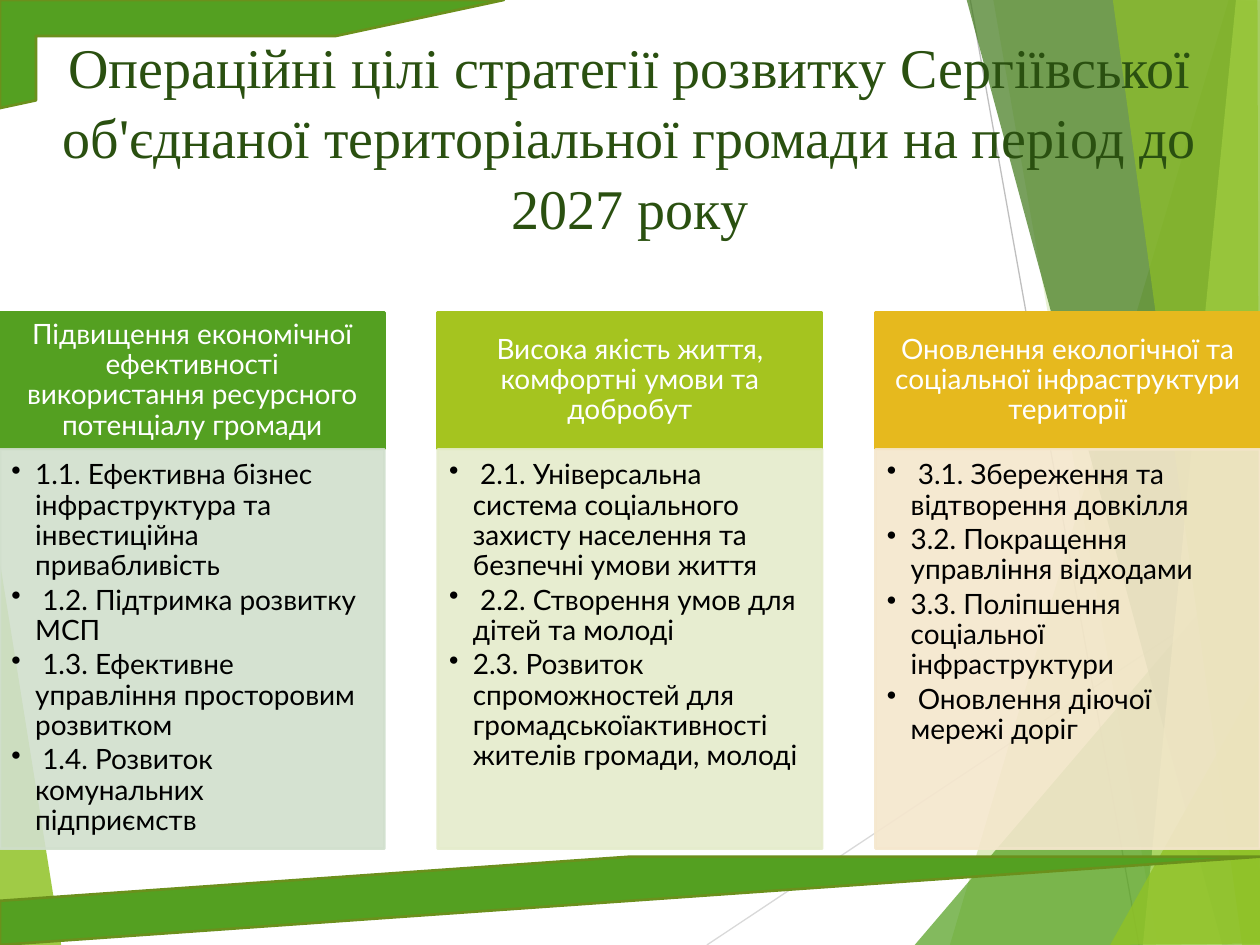
from typing import NamedTuple

from lxml.etree import SubElement
from pptx import Presentation
from pptx.dml.color import RGBColor
from pptx.enum.shapes import MSO_CONNECTOR, MSO_SHAPE as Preset
from pptx.enum.text import MSO_ANCHOR as Anchor, PP_ALIGN as Align
from pptx.oxml.ns import qn
from pptx.util import Cm, Pt

GREEN = RGBColor(0x54, 0xA0, 0x21)
LIME = RGBColor(0x90, 0xC2, 0x26)
FOREST = RGBColor(0x3F, 0x78, 0x19)
PALE_LIME = RGBColor(0xC0, 0xE4, 0x74)
OLIVE = RGBColor(0x6B, 0x90, 0x1C)
YELLOW_GREEN = RGBColor(0xA5, 0xC4, 0x1F)
GOLD = RGBColor(0xE6, 0xB9, 0x1E)
PALE_GREEN = RGBColor(0xD1, 0xDF, 0xCD)
PALE_YELLOW_GREEN = RGBColor(0xE5, 0xEC, 0xCB)
PALE_GOLD = RGBColor(0xF5, 0xE7, 0xCD)
TITLE_GREEN = RGBColor(0x2A, 0x50, 0x10)
LIGHT_GRAY = RGBColor(0xD9, 0xD9, 0xD9)
GRAY = RGBColor(0xBF, 0xBF, 0xBF)
WHITE = RGBColor(0xFF, 0xFF, 0xFF)
BLACK = RGBColor(0, 0, 0)

SLIDE_WIDTH, SLIDE_HEIGHT = 25.4, 19.05
COLUMN_WIDTH = 7.75
HEADER_TOP, HEADER_HEIGHT = 6.3, 2.75
BODY_TOP, BODY_HEIGHT = 9.06, 8.05


class Facet(NamedTuple):
    color: RGBColor
    opacity: int
    points: list[tuple[float, float]]


class Ray(NamedTuple):
    color: RGBColor
    start: tuple[float, float]
    end: tuple[float, float]


class Goal(NamedTuple):
    heading: str
    color: RGBColor
    pale: RGBColor
    items: list[str]


LEFT_FACET = Facet(LIME, 85, [(-0.03, 11.15), (1.24, 19.08), (-0.03, 19.05)])
RAYS = [
    Ray(LIGHT_GRAY, (14.25, 19.05), (25.43, 11.61)),
    Ray(GRAY, (19.56, 0), (22.96, 19.05)),
]
RIGHT_FACETS = [
    Facet(LIME, 30, [(24.77, 0), (19.15, 19.05), (25.45, 19.08), (25.43, 0.03)]),
    Facet(LIME, 20, [(20.02, -0.03), (23.34, 19.05), (25.43, 19.05), (25.43, -0.03)]),
    Facet(GREEN, 72, [(18.44, 19.05), (25.4, 10.9), (25.43, 19.05)]),
    Facet(FOREST, 70, [(19.48, -0.03), (24.64, 19.05), (25.43, 19.02), (25.43, -0.03)]),
    Facet(PALE_LIME, 70, [(24.92, -0.03), (23.04, 19.05), (25.43, 19.05), (25.4, -0.03)]),
    Facet(LIME, 65, [(22.43, -0.03), (25.04, 19.05), (25.4, 19.05), (25.35, -0.03)]),
    Facet(LIME, 80, [(22.38, 19.05), (25.43, 13.59), (25.43, 19.02)]),
]
TITLE = ("Операційні цілі стратегії розвитку Сергіївської об'єднаної "
         "територіальної громади на період до 2027 року")
GOALS = [
    Goal("Підвищення економічної ефективності використання ресурсного потенціалу громади",
         GREEN, PALE_GREEN, [
             "1.1. Ефективна бізнес інфраструктура та інвестиційна привабливість",
             " 1.2. Підтримка розвитку МСП",
             " 1.3. Ефективне управління просторовим розвитком",
             " 1.4. Розвиток комунальних підприємств"]),
    Goal("Висока якість життя, комфортні умови та добробут",
         YELLOW_GREEN, PALE_YELLOW_GREEN, [
             " 2.1. Універсальна система соціального захисту населення та безпечні умови життя",
             " 2.2. Створення умов для дітей та молоді",
             "2.3. Розвиток спроможностей для громадськоїактивності жителів громади, молоді"]),
    Goal("Оновлення екологічної та соціальної інфраструктури території",
         GOLD, PALE_GOLD, [
             " 3.1. Збереження та відтворення довкілля",
             "3.2. Покращення управління відходами",
             "3.3. Поліпшення соціальної інфраструктури",
             " Оновлення діючої мережі доріг"]),
]


def set_opacity(fill, percent: int) -> None:
    """Make a solid fill, of a shape or of its line, see-through."""
    if percent < 100:
        # python-pptx has no public transparency setting
        color = fill._xPr.find(qn("a:solidFill"))[0]
        SubElement(color, qn("a:alpha"), val=str(percent * 1000))


def paint(shape, color: RGBColor, *, line: RGBColor | None = None, opacity: int = 100) -> None:
    shape.shadow.inherit = False
    shape.fill.solid()
    shape.fill.fore_color.rgb = color
    set_opacity(shape.fill, opacity)
    if line is None:
        shape.line.fill.background()
    else:
        shape.line.color.rgb = line
        shape.line.width = Pt(1.5)
        set_opacity(shape.line.fill, opacity)


def write_text(shape, texts: list[str], *, font: str = "Lato", size: float = 16,
               color: RGBColor = BLACK, align: Align = Align.LEFT, anchor: Anchor = Anchor.TOP,
               insets: tuple[float, float, float, float] = (0.25, 0.13, 0.25, 0.13),
               line_spacing: float = 0.9, space_after: float = 0, bullets: bool = False) -> None:
    frame = shape.text_frame
    frame.word_wrap = True
    frame.vertical_anchor = anchor
    frame.margin_left, frame.margin_top, frame.margin_right, frame.margin_bottom = map(Cm, insets)
    for index, text in enumerate(texts):
        paragraph = frame.add_paragraph() if index else frame.paragraphs[0]
        paragraph.alignment = align
        paragraph.line_spacing = line_spacing
        paragraph.space_after = Pt(space_after)
        run = paragraph.add_run()
        run.text = text
        run.font.name = font
        run.font.size = Pt(size)
        run.font.color.rgb = color
        if bullets:
            properties = paragraph._p.get_or_add_pPr()
            properties.set("marL", str(Cm(0.48)))
            properties.set("indent", str(-Cm(0.48)))
            SubElement(properties, qn("a:buChar"), char="•")


def add_preset(slide, preset: Preset, left: float, top: float, width: float, height: float):
    return slide.shapes.add_shape(preset, Cm(left), Cm(top), Cm(width), Cm(height))


def draw_facet(slide, facet: Facet) -> None:
    start, *rest = [(Cm(x), Cm(y)) for x, y in facet.points]
    builder = slide.shapes.build_freeform(*start)
    builder.add_line_segments(rest, close=True)
    paint(builder.convert_to_shape(), facet.color, opacity=facet.opacity)


def draw_ray(slide, ray: Ray) -> None:
    connector = slide.shapes.add_connector(
        MSO_CONNECTOR.STRAIGHT, *map(Cm, ray.start), *map(Cm, ray.end))
    connector.line.color.rgb = ray.color
    connector.line.width = Pt(0.75)
    SubElement(connector._element.spPr, qn("a:effectLst"))


def draw_goal(slide, goal: Goal, left: float) -> None:
    header = add_preset(slide, Preset.RECTANGLE, left, HEADER_TOP, COLUMN_WIDTH, HEADER_HEIGHT)
    paint(header, goal.color, line=goal.color)
    write_text(header, [goal.heading], color=WHITE, align=Align.CENTER, anchor=Anchor.MIDDLE,
               insets=(0.3, 0.18, 0.3, 0.18))
    body = add_preset(slide, Preset.RECTANGLE, left, BODY_TOP, COLUMN_WIDTH, BODY_HEIGHT)
    paint(body, goal.pale, line=goal.pale, opacity=90)
    write_text(body, goal.items, insets=(0.23, 0.23, 0.3, 0.36), space_after=2.5, bullets=True)


def main() -> None:
    presentation = Presentation()
    presentation.slide_width, presentation.slide_height = Cm(SLIDE_WIDTH), Cm(SLIDE_HEIGHT)
    slide = presentation.slides.add_slide(presentation.slide_layouts[6])

    # Background facets
    draw_facet(slide, LEFT_FACET)
    for ray in RAYS:
        draw_ray(slide, ray)
    for facet in RIGHT_FACETS:
        draw_facet(slide, facet)

    # Title
    title = slide.shapes.add_textbox(Cm(0), Cm(0.4), Cm(SLIDE_WIDTH), Cm(4.3))
    write_text(title, [TITLE], font="Times New Roman", size=32, color=TITLE_GREEN,
               align=Align.CENTER, insets=(0.25, 0.18, 0.25, 0.13), line_spacing=1.05)

    # Bottom stripe and corner frame
    paint(add_preset(slide, Preset.DIAGONAL_STRIPE, 0, 17.27, SLIDE_WIDTH, 1.78),
          GREEN, line=OLIVE)
    paint(add_preset(slide, Preset.HALF_FRAME, 0, 0, 10.16, 2.18), GREEN, line=OLIVE)

    # Goal columns, spread evenly from edge to edge
    pitch = (SLIDE_WIDTH - COLUMN_WIDTH) / (len(GOALS) - 1)
    for index, goal in enumerate(GOALS):
        draw_goal(slide, goal, index * pitch)

    presentation.save("out.pptx")


if __name__ == "__main__":
    main()
